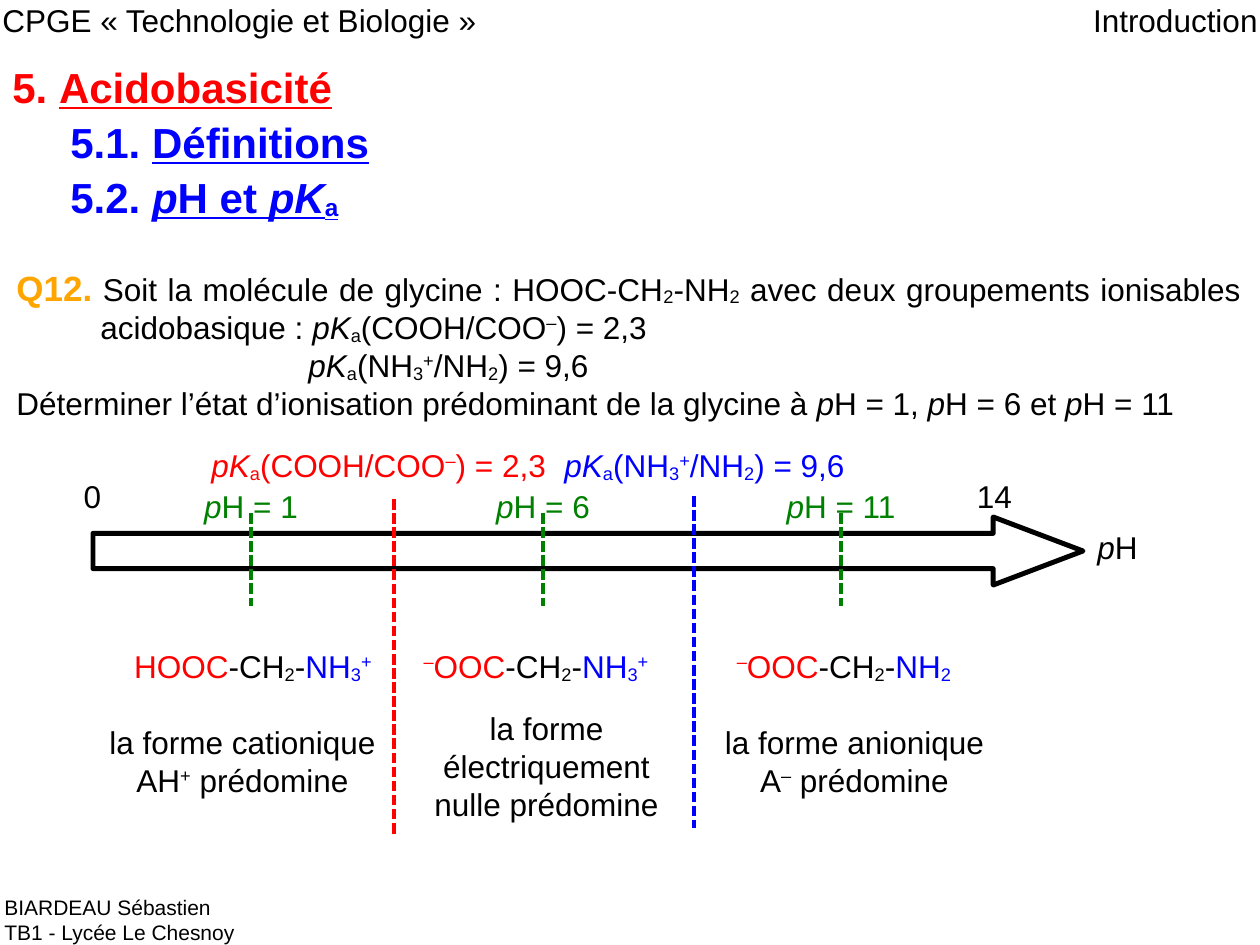
"""Build the slide on the pH domains where each form of glycine predominates."""
from dataclasses import dataclass, replace
from typing import NamedTuple, Optional

from lxml.etree import SubElement
from pptx import Presentation
from pptx.dml.color import RGBColor
from pptx.enum.dml import MSO_LINE
from pptx.enum.shapes import MSO_CONNECTOR, MSO_SHAPE
from pptx.enum.text import PP_ALIGN as Align
from pptx.oxml.ns import qn
from pptx.util import Pt

BLACK = RGBColor(0x00, 0x00, 0x00)
RED = RGBColor(0xFF, 0x00, 0x00)
BLUE = RGBColor(0x00, 0x00, 0xFF)
GREEN = RGBColor(0x00, 0x80, 0x00)
ORANGE = RGBColor(0xFF, 0xA5, 0x00)
FONT = "Arial"
EMU_PER_PX = 914400 / 126


class Rect(NamedTuple):
    left: int
    top: int
    width: int
    height: int


@dataclass(frozen=True)
class Span:
    text: str
    color: Optional[RGBColor] = None
    size: Optional[int] = None
    bold: bool = False
    italic: bool = False
    underline: bool = False
    baseline: int = 0


@dataclass(frozen=True)
class Line:
    spans: tuple[Span, ...]
    align: Align = Align.LEFT
    color: RGBColor = BLACK
    size: int = 18
    margin: int = 0
    indent: int = 0


@dataclass(frozen=True)
class Domain:
    ph: str
    tick_x: int
    formula_left: int
    formula: tuple[Span, ...]
    caption_rect: Rect
    caption: tuple[Span, ...]


def px(length: int) -> int:
    return round(length * EMU_PER_PX)


def sub(text: str) -> Span:
    return Span(text, baseline=-8000)


def sup(text: str) -> Span:
    return Span(text, baseline=33000)


def ital(text: str) -> Span:
    return Span(text, italic=True)


def tint(color: RGBColor, *spans: Span) -> tuple[Span, ...]:
    return tuple(replace(span, color=color) for span in spans)


def heading(color: RGBColor, number: str, *title: Span, margin: int = 0) -> Line:
    spans = (Span(number, bold=True),
             *(replace(span, bold=True, underline=True) for span in title))
    return Line(spans, color=color, size=24, margin=margin)


P = ital("p")
PKA = (ital("pK"), sub("a"))
ACID_PKA = (*PKA, Span("(COOH/COO"), sup("–"), Span(") = 2,3"))
AMINE_PKA = (*PKA, Span("(NH"), sub("3"), sup("+"), Span("/NH"), sub("2"), Span(") = 9,6"))
ACID = tint(RED, Span("HOOC"))
CARBOXYLATE = tint(RED, sup("–"), Span("OOC"))
CARBON = (Span("-CH"), sub("2"), Span("-"))
AMMONIUM = tint(BLUE, Span("NH"), sub("3"), sup("+ "))
AMINE = tint(BLUE, Span("NH"), sub("2 "))

QUESTION = (
    Line((Span("Q12.", color=ORANGE, size=20, bold=True),
          Span(" Soit la molécule de glycine : HOOC-CH"), sub("2"), Span("-NH"), sub("2"),
          Span(" avec deux groupements ionisables acidobasique : "), *ACID_PKA),
         Align.JUSTIFY, margin=84, indent=-84),
    Line(AMINE_PKA, Align.JUSTIFY, margin=292),
    Line((Span("Déterminer l’état d’ionisation prédominant de la glycine à "),
          P, Span("H = 1, "), P, Span("H = 6 et "), P, Span("H = 11"))),
)

TEXTS = (
    (Rect(-10, -5, 620, 48), (Line((Span("CPGE « Technologie et Biologie »"),)),)),
    (Rect(605, -5, 665, 48), (Line((Span("Introduction"),), Align.RIGHT),)),
    (Rect(-8, 888, 256, 59), (Line((Span("BIARDEAU Sébastien"),), size=12),
                              Line((Span("TB1 - Lycée Le Chesnoy"),), size=12))),
    (Rect(0, 55, 355, 59), (heading(RED, "5. ", Span("Acidobasicité")),)),
    (Rect(0, 110, 432, 59), (heading(BLUE, "5.1. ", Span("Définitions"), margin=58),)),
    (Rect(0, 165, 432, 59), (heading(BLUE, "5.2. ", P, Span("H et "), *PKA, margin=58),)),
    (Rect(4, 260, 1249, 193), QUESTION),
    (Rect(1085, 522, 74, 48), (Line((P, Span("H"))),)),
    (Rect(951, 471, 87, 48), (Line((Span("14"),), Align.CENTER),)),
    (Rect(49, 471, 87, 48), (Line((Span("0"),), Align.CENTER),)),
    (Rect(199, 440, 391, 48), (Line(ACID_PKA, Align.JUSTIFY, RED),)),
    (Rect(552, 440, 391, 48), (Line(AMINE_PKA, Align.JUSTIFY, BLUE),)),
)

DOMAINS = (
    Domain("1", 251, 105, ACID + CARBON + AMMONIUM, Rect(97, 717, 291, 83),
           (Span("la forme cationique AH"), sup("+"), Span(" prédomine"))),
    Domain("6", 543, 388, CARBOXYLATE + CARBON + AMMONIUM, Rect(394, 703, 305, 118),
           (Span("la forme électriquement nulle prédomine"),)),
    Domain("11", 841, 696, CARBOXYLATE + CARBON + AMINE, Rect(702, 717, 305, 83),
           (Span("la forme anionique A"), sup("–"), Span(" prédomine"))),
)


def add_text(page, rect: Rect, *lines: Line) -> None:
    frame = page.shapes.add_textbox(*map(px, rect)).text_frame
    frame.word_wrap = True
    for number, line in enumerate(lines):
        para = frame.add_paragraph() if number else frame.paragraphs[0]
        para.alignment = line.align
        properties = para._p.get_or_add_pPr()
        properties.set("marL", str(px(line.margin)))
        properties.set("indent", str(px(line.indent)))
        for span in line.spans:
            run = para.add_run()
            run.text = span.text
            font = run.font
            font.name = FONT
            font.size = Pt(span.size or line.size)
            font.color.rgb = span.color or line.color
            font.bold, font.italic, font.underline = span.bold, span.italic, span.underline
            if span.baseline:
                run._r.get_or_add_rPr().set("baseline", str(span.baseline))


def add_marker(page, x: int, top: int, bottom: int, color: RGBColor) -> None:
    marker = page.shapes.add_connector(MSO_CONNECTOR.STRAIGHT, px(x), px(top), px(x), px(bottom))
    marker.line.color.rgb = color
    marker.line.width = Pt(2)
    marker.line.dash_style = MSO_LINE.SQUARE_DOT
    SubElement(marker._element.spPr, qn("a:effectLst"))


def add_axis(page, rect: Rect) -> None:
    axis = page.shapes.add_shape(MSO_SHAPE.RIGHT_ARROW, *map(px, rect))
    axis.adjustments[0] = 0.52
    axis.adjustments[1] = 1.32
    axis.shadow.inherit = False
    axis.fill.background()
    axis.line.color.rgb = BLACK
    axis.line.width = Pt(2.83)


def add_domain(page, domain: Domain) -> None:
    add_marker(page, domain.tick_x, 513, 606, GREEN)
    add_text(page, Rect(domain.tick_x - 67, 481, 134, 48),
             Line((P, Span(f"H = {domain.ph}")), Align.CENTER, GREEN))
    add_text(page, Rect(domain.formula_left, 641, 301, 48), Line(domain.formula, Align.CENTER))
    add_text(page, domain.caption_rect, Line(domain.caption, Align.CENTER))


def main() -> None:
    deck = Presentation()
    deck.slide_width, deck.slide_height = px(1260), px(945)
    page = deck.slides.add_slide(deck.slide_layouts[6])
    add_axis(page, Rect(93, 517, 990, 68))
    for rect, lines in TEXTS:
        add_text(page, rect, *lines)
    add_marker(page, 394, 499, 835, RED)
    add_marker(page, 694, 496, 828, BLUE)
    for domain in DOMAINS:
        add_domain(page, domain)
    deck.save("out.pptx")


if __name__ == "__main__":
    main()
